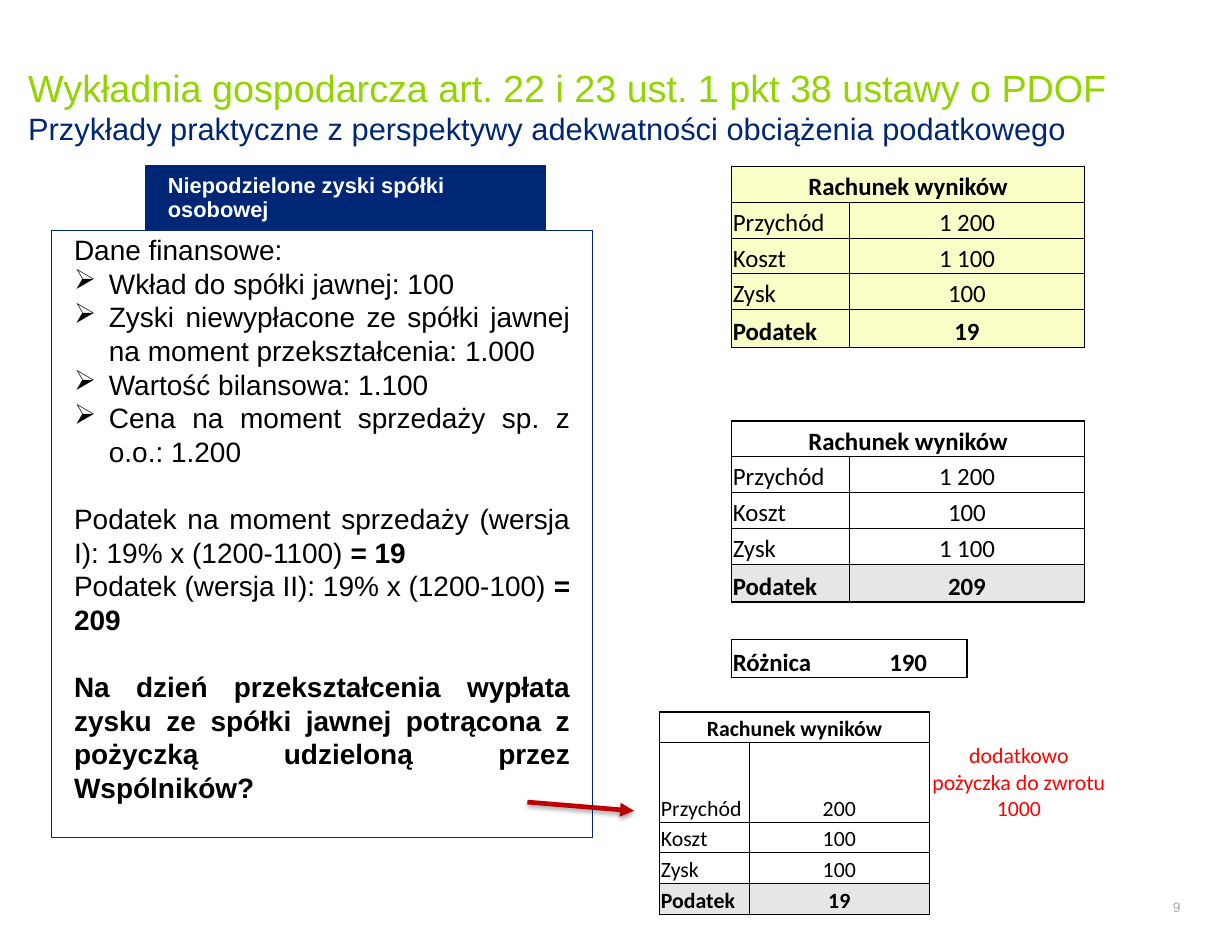
from lxml.etree import SubElement
from pptx import Presentation
from pptx.dml.color import RGBColor
from pptx.enum.shapes import MSO_CONNECTOR, MSO_SHAPE
from pptx.enum.text import MSO_ANCHOR, PP_ALIGN
from pptx.oxml.ns import qn
from pptx.util import Cm, Pt

GREEN = RGBColor(0x92, 0xD4, 0x00)
NAVY = RGBColor(0x00, 0x27, 0x76)
BLACK = RGBColor(0x00, 0x00, 0x00)
WHITE = RGBColor(0xFF, 0xFF, 0xFF)
SILVER = RGBColor(0xA6, 0xA6, 0xA6)
CREAM = RGBColor(0xF9, 0xFE, 0xC7)
GREY = RGBColor(0xE7, 0xE6, 0xE6)
RED = RGBColor(0xFF, 0x00, 0x00)
CRIMSON = RGBColor(0xC0, 0x00, 0x00)
LABELS = ("Przychód", "Koszt", "Zysk", "Podatek")
LINE_HEIGHT = Pt(21.6)


class Page:
    """Draws styled elements on one slide."""

    text_font = "Arial"
    table_font = "Calibri"

    def __init__(self, deck):
        self.page = deck.slides.add_slide(deck.slide_layouts[6])

    def span(self, para, text, size, color, bold=False, font=text_font):
        span = para.add_run()
        span.text = text
        span.font.name = font
        span.font.size = Pt(size)
        span.font.bold = bold
        span.font.color.rgb = color

    def frame(self, box, anchor, side=0, top=0, bottom=0):
        frame = box.text_frame
        frame.word_wrap = True
        frame.vertical_anchor = anchor
        frame.margin_left = frame.margin_right = Cm(side)
        frame.margin_top, frame.margin_bottom = Cm(top), Cm(bottom)
        return frame

    def paragraph(self, frame, align=PP_ALIGN.LEFT):
        first = frame.paragraphs[0]
        para = frame.add_paragraph() if first.runs else first
        para.alignment = align
        return para

    def text(self, left, top, width, height, lines, align=PP_ALIGN.LEFT):
        box = self.page.shapes.add_textbox(Cm(left), Cm(top), Cm(width), Cm(height))
        frame = self.frame(box, MSO_ANCHOR.MIDDLE)
        for line in lines:
            self.span(self.paragraph(frame, align), *line)

    def panel(self, left, top, width, height, fill=None):
        box = self.page.shapes.add_shape(
            MSO_SHAPE.RECTANGLE, Cm(left), Cm(top), Cm(width), Cm(height))
        box.shadow.inherit = False
        box.line.color.rgb = NAVY
        box.line.width = Pt(1)
        if fill is None:
            box.fill.background()
        else:
            box.fill.solid()
            box.fill.fore_color.rgb = fill
        return box

    def bullet(self, para):
        properties = para._p.get_or_add_pPr()
        properties.set("marL", str(Cm(0.79)))
        properties.set("indent", str(-Cm(0.79)))
        SubElement(properties, qn("a:buChar"), char="➢")

    def border(self, cell, side, weight):
        properties = cell._tc.get_or_add_tcPr()
        line = SubElement(properties, qn(f"a:ln{side}"), w=str(Pt(weight)))
        if weight:
            fill = SubElement(line, qn("a:solidFill"))
            SubElement(fill, qn("a:srgbClr"), val=str(BLACK))
        else:
            SubElement(line, qn("a:noFill"))

    def table(self, left, top, columns, rows, size, cells, merges, blocks):
        """Blocks are (first row, last row, last column, inner line weight)."""
        table = self.page.shapes.add_table(
            len(rows), len(columns), Cm(left), Cm(top),
            Cm(sum(columns)), Cm(sum(rows))).table
        table.first_row = table.horz_banding = False
        for column, width in zip(table.columns, columns):
            column.width = Cm(width)
        for row, height in zip(table.rows, rows):
            row.height = Cm(height)
        owner = {}
        for r0, c0, r1, c1 in merges:
            table.cell(r0, c0).merge(table.cell(r1, c1))
            owner.update({(r, c): (r0, c0)
                          for r in range(r0, r1 + 1) for c in range(c0, c1 + 1)})

        def block(r, c):
            return next((b for b in blocks if b[0] <= r <= b[1] and 0 <= c <= b[2]), None)

        def weight(here, there):
            if owner.get(here, here) == owner.get(there, there):
                return 0
            mine, other = block(*here), block(*there)
            if mine != other:
                return 1
            return mine[3] if mine else 0

        for r in range(len(rows)):
            for c in range(len(columns)):
                cell = table.cell(r, c)
                wide = cell.span_width if cell.is_merge_origin else 1
                tall = cell.span_height if cell.is_merge_origin else 1
                neighbours = {"L": (r, c - 1), "R": (r, c + wide),
                              "T": (r - 1, c), "B": (r + tall, c)}
                for side, there in neighbours.items():
                    self.border(cell, side, weight((r, c), there))
                cell.margin_left = cell.margin_right = cell.margin_top = Cm(0.03)
                cell.margin_bottom = 0
                cell.vertical_anchor = MSO_ANCHOR.BOTTOM
                text, align, bold, color, fill = cells.get(
                    (r, c), ("", PP_ALIGN.LEFT, False, BLACK, None))
                if fill is None:
                    cell.fill.background()
                else:
                    cell.fill.solid()
                    cell.fill.fore_color.rgb = fill
                para = self.paragraph(cell.text_frame, align)
                if text:
                    self.span(para, text, size, color, bold, self.table_font)
                else:
                    SubElement(para._p, qn("a:endParaRPr"), sz=str(size * 100))

    def arrow(self, x1, y1, x2, y2):
        arrow = self.page.shapes.add_connector(
            MSO_CONNECTOR.STRAIGHT, Cm(x1), Cm(y1), Cm(x2), Cm(y2))
        arrow.line.color.rgb = CRIMSON
        arrow.line.width = Pt(3)
        SubElement(arrow.line._get_or_add_ln(), qn("a:tailEnd"), type="triangle")
        effects = SubElement(arrow._element.spPr, qn("a:effectLst"))
        shadow = SubElement(effects, qn("a:outerShdw"), blurRad=str(Pt(3.1)),
                            dist=str(Pt(1.8)), dir="5400000", rotWithShape="0")
        tone = SubElement(shadow, qn("a:srgbClr"), val=str(BLACK))
        SubElement(tone, qn("a:alpha"), val="35000")


def statement(top, values, fill=None, tax_fill=GREY):
    """Return the cells of one income statement."""
    cells = {(top, 0): ("Rachunek wyników", PP_ALIGN.CENTER, True, BLACK, fill)}
    for row, (label, value) in enumerate(zip(LABELS, values), top + 1):
        is_tax = label == LABELS[-1]
        style = (is_tax, BLACK, tax_fill if is_tax else fill)
        cells[row, 0] = (label, PP_ALIGN.LEFT, *style)
        cells[row, 1] = (value, PP_ALIGN.CENTER, *style)
    return cells


def main():
    deck = Presentation()
    deck.slide_width, deck.slide_height = Cm(27.94), Cm(21.59)
    page = Page(deck)
    page.text(0.64, 1.04, 25.63, 2.72, [
        ("Wykładnia gospodarcza art. 22 i 23 ust. 1 pkt 38 ustawy o PDOF", 24.3, GREEN),
        ("Przykłady praktyczne z perspektywy adekwatności obciążenia podatkowego", 19.8, NAVY)])
    page.text(24.36, 20.17, 2.41, 0.79, [("9", 8.8, SILVER)], PP_ALIGN.RIGHT)

    heading = page.frame(page.panel(3.3, 3.76, 9.07, 1.47, NAVY),
                         MSO_ANCHOR.MIDDLE, 0.51, 0.51, 0.51)
    para = page.paragraph(heading)
    para.line_spacing, para.space_after = Pt(15), Pt(6)
    page.span(para, "Niepodzielone zyski spółki osobowej", 14, WHITE, True)

    body = page.frame(page.panel(1.17, 5.23, 12.27, 13.77), MSO_ANCHOR.TOP, 0.51, 0.05)
    for plain, strong, bulleted, gap in [
            ("Dane finansowe:", "", False, False),
            ("Wkład do spółki jawnej: 100", "", True, False),
            ("Zyski niewypłacone ze spółki jawnej na moment przekształcenia: 1.000", "", True, False),
            ("Wartość bilansowa: 1.100", "", True, False),
            ("Cena na moment sprzedaży sp. z o.o.: 1.200", "", True, False),
            ("Podatek na moment sprzedaży (wersja I): 19% x (1200-1100) ", "= 19", False, True),
            ("Podatek (wersja II): 19% x (1200-100) ", "= 209", False, False),
            ("", "Na dzień przekształcenia wypłata zysku ze spółki jawnej potrącona "
             "z pożyczką udzieloną przez Wspólników?", False, True)]:
        para = page.paragraph(body, PP_ALIGN.JUSTIFY)
        para.line_spacing = LINE_HEIGHT
        para.space_before = LINE_HEIGHT if gap else Pt(0)
        if bulleted:
            page.bullet(para)
        for text, bold in ((plain, False), (strong, True)):
            if text:
                page.span(para, text, 18, BLACK, bold)

    cells = statement(0, ("1 200", "1 100", "100", "19"), CREAM, CREAM)
    cells |= statement(7, ("1 200", "100", "1 100", "209"))
    cells[13, 0] = ("Różnica", PP_ALIGN.LEFT, True, BLACK, None)
    cells[13, 1] = ("190", PP_ALIGN.CENTER, True, BLACK, None)
    merges = [(row, int(row != top), row, 2)
              for top in (0, 7) for row in range(top, top + 5)]
    rows = [0.86 if row in (4, 6, 11, 12, 13) else 0.81 for row in range(14)]
    page.table(16.59, 3.78, [2.67] * 3, rows, 16, cells, merges,
               [(0, 4, 2, 0.5), (7, 11, 2, 0.5), (13, 13, 1, 0)])

    cells = statement(0, ("200", "100", "100", "19"))
    cells[0, 2] = ("dodatkowo pożyczka do zwrotu 1000", PP_ALIGN.CENTER, False, RED, None)
    page.table(14.96, 16.15, [2.03, 4.09, 2.03, 2.03], [0.69] * 4 + [0.71], 14, cells,
               [(0, 0, 0, 1), (0, 2, 1, 3), (2, 2, 3, 3)], [(0, 4, 1, 0.5)])
    page.arrow(11.96, 18.19, 14.38, 18.39)
    deck.save("out.pptx")


if __name__ == "__main__":
    main()
